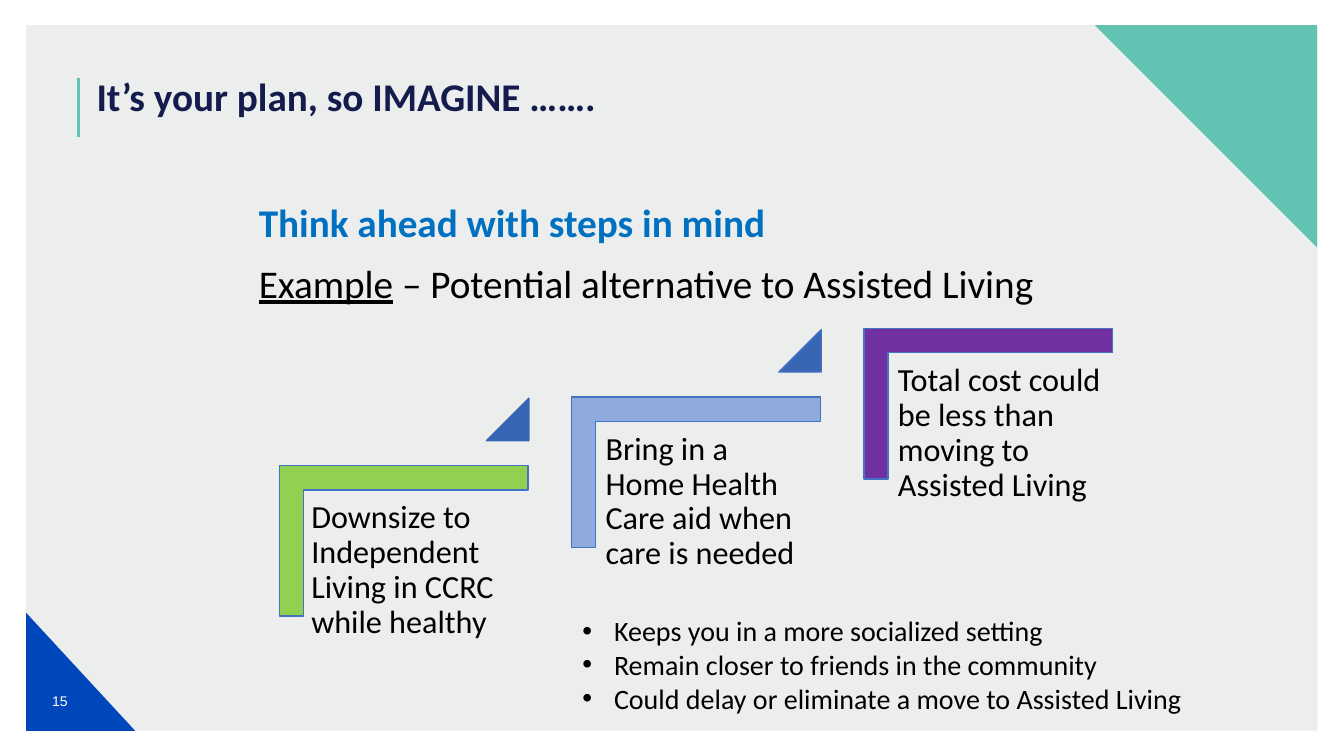
from pptx import Presentation
from pptx import util as u
from pptx.dml.color import RGBColor
from pptx.enum import shapes, text
from pptx.oxml.ns import qn
from lxml import etree

Pt = u.Pt
Kind = shapes.MSO_SHAPE
Mid = text.MSO_ANCHOR.MIDDLE
Mark = text.PP_ALIGN.CENTER

THEME = dict(
    pale="D0D3D4", blue="0047BB", teal="63C3B2", navy="141B4D", head="0070C0",
    ink="000000", white="FFFFFF", edge="4472C4", arrow="3965B5",
    font="Calibri", small="Arial", title=28, step=23, list=20, page=10,
)

TITLE = "It’s your plan, so IMAGINE ……."
LEAD = "Think ahead with steps in mind"
CASE = ("Example", " – Potential alternative to Assisted Living")
STEPS = [
    ("Downsize to Independent Living in CCRC while healthy", "92D050", 19.4, 184.3),
    ("Bring in a Home Health Care aid when care is needed", "8FAADC", 18, 160.6),
    ("Total cost could be less than moving to Assisted Living", "7030A0", 18, 160.6),
]
GAINS = [
    "Keeps you in a more socialized setting",
    "Remain closer to friends in the community",
    "Could delay or eliminate a move to Assisted Living",
]
PAGE = "15"

START = (234.7, 297.4)
PITCH = (208.8, -48.96)
CORNER = (107.3, 177.8)
TIP = 30.3

deck = Presentation()
deck.slide_width, deck.slide_height = Pt(960), Pt(540)
slide = deck.slides.add_slide(deck.slide_layouts[6])


def tone(name):
    return RGBColor.from_string(THEME.get(name, name))


def shape(kind, box, fill, line=None, turn=0, adj=(), alpha=None):
    item = slide.shapes.add_shape(kind, *map(Pt, box))
    item.shadow.inherit = False
    item.rotation = turn
    for i, val in enumerate(adj):
        item.adjustments[i] = val
    item.fill.solid()
    item.fill.fore_color.rgb = tone(fill)
    if alpha:
        clr = item._element.spPr.find(".//" + qn("a:srgbClr"))
        etree.SubElement(clr, qn("a:alpha"), val=str(alpha * 1000))
    if line:
        item.line.color.rgb = tone(line)
        item.line.width = Pt(1)
    else:
        item.line.fill.background()


def style(run, size, color="ink", font="font", bold=False, under=None):
    run.font.size = Pt(THEME[size])
    run.font.name = THEME[font]
    run.font.color.rgb = tone(color)
    run.font.bold = bold
    run.font.underline = under


def write(box, paras, size, color="ink", font="font", bold=False, align=None,
          anchor=None, pad=None, lead=None, bullet=None):
    frame = slide.shapes.add_textbox(*map(Pt, box)).text_frame
    frame.word_wrap = True
    if anchor is not None:
        frame.vertical_anchor = anchor
    if pad is not None:
        frame.margin_left = frame.margin_right = Pt(pad)
        frame.margin_top = frame.margin_bottom = Pt(pad)
    for i, words in enumerate(paras):
        para = frame.add_paragraph() if i else frame.paragraphs[0]
        para.alignment = align
        para.line_spacing = lead
        if bullet:
            prop = para._p.get_or_add_pPr()
            prop.set("marL", str(Pt(bullet)))
            prop.set("indent", str(-Pt(bullet)))
            etree.SubElement(prop, qn("a:buFont"), typeface="Arial")
            etree.SubElement(prop, qn("a:buChar"), char="•")
        run = para.add_run()
        run.text = words
        style(run, size, color, font, bold)
    return frame


shape(Kind.RECTANGLE, (18.7, 18, 922.3, 504), "pale", alpha=40)
shape(Kind.RIGHT_TRIANGLE, (18.7, 437.8, 77.8, 84.2), "blue")
rule = slide.shapes.add_connector(
    shapes.MSO_CONNECTOR.STRAIGHT, *map(Pt, (56.2, 55.4, 56.2, 97.9)))
rule.line.color.rgb = tone("teal")
rule.line.width = Pt(2)
etree.SubElement(rule._element.spPr, qn("a:effectLst"))
shape(Kind.RIGHT_TRIANGLE, (782, 18, 158.8, 158.8), "teal", turn=180)

write((23, 479.5, 39.6, 41.8), [PAGE], "page", "white", "small",
      align=Mark, anchor=Mid)
write((61.9, 48.2, 735.1, 56.9), [TITLE], "title", "navy", bold=True)

intro = write((177.8, 138.2, 631.4, 85), [LEAD], "title", "head", bold=True)
case = intro.add_paragraph()
case.space_before = Pt(9.6)
for part, under in zip(CASE, (True, False)):
    run = case.add_run()
    run.text = part
    style(run, "title", under=under)

for i, (words, fill, shift, wide) in enumerate(STEPS):
    x, y = (a + i * d for a, d in zip(START, PITCH))
    shape(Kind.CORNER, (x, y, *CORNER), fill, "edge", 90, (0.161, 0.161))
    write((x - shift, y + 53.3, wide, 141.1), [words], "step", pad=7.2, lead=0.9)
    if i < len(STEPS) - 1:
        shape(Kind.ISOSCELES_TRIANGLE, (x + 112.8, y - 13, TIP, TIP), "arrow",
              "edge" if i else "arrow", adj=(1,))

write((409, 434.9, 527.8, 79.9), GAINS, "list", bullet=22.5)

deck.save("out.pptx")
